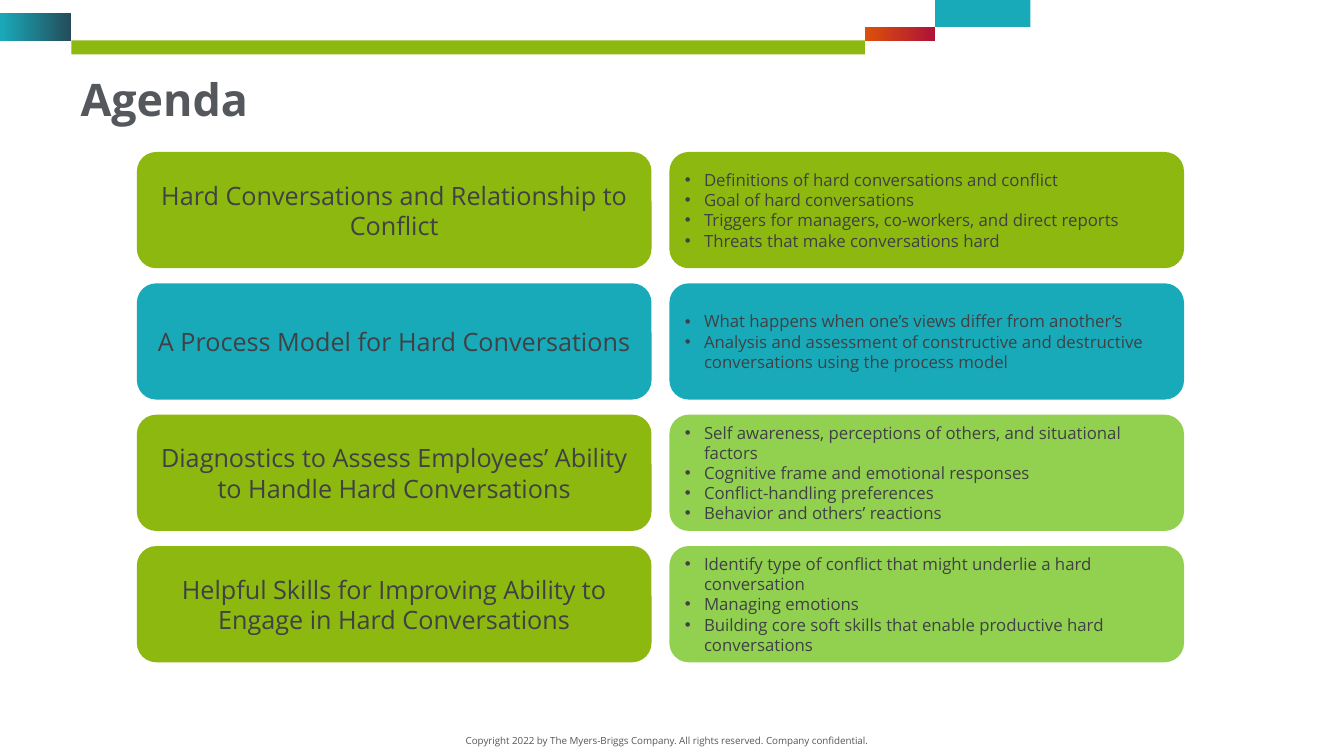
from lxml.etree import SubElement
from pptx import Presentation
from pptx.dml.color import RGBColor
from pptx.enum.shapes import MSO_SHAPE
from pptx.enum.text import MSO_ANCHOR, PP_ALIGN
from pptx.oxml.ns import qn
from pptx.util import Cm, Pt

TITLE = "Agenda"
FOOTER = "Copyright 2022 by The Myers-Briggs Company. All rights reserved. Company confidential."
TOPICS = [
    ("Hard Conversations and Relationship to Conflict", "green", "green", [
        "Definitions of hard conversations and conflict",
        "Goal of hard conversations",
        "Triggers for managers, co-workers, and direct reports",
        "Threats that make conversations hard",
    ]),
    ("A Process Model for Hard Conversations", "teal", "teal", [
        "What happens when one’s views differ from another’s",
        "Analysis and assessment of constructive and destructive conversations using the process model",
    ]),
    ("Diagnostics to Assess Employees’ Ability to Handle Hard Conversations", "green", "lime", [
        "Self awareness, perceptions of others, and situational factors",
        "Cognitive frame and emotional responses",
        "Conflict-handling preferences",
        "Behavior and others’ reactions",
    ]),
    ("Helpful Skills for Improving Ability to Engage in Hard Conversations", "green", "lime", [
        "Identify type of conflict that might underlie a hard conversation",
        "Managing emotions",
        "Building core soft skills that enable productive hard conversations",
    ]),
]
BANDS = [
    (1.8, 1.02, 20, 0.35, ["green"]),
    (0, 0.33, 1.8, 0.7, ["teal", "navy"]),
    (23.57, -0.02, 2.4, 0.7, ["teal"]),
    (21.8, 0.68, 1.77, 0.35, ["orange", "red"]),
]


class Theme:
    font = "Open Sans"
    size = {"title": 32, "topic": 18, "point": 12, "footer": 7}
    color = {
        "green": "8CB80F", "teal": "19AABA", "lime": "92D050", "navy": "244C5A",
        "orange": "DC500A", "red": "AE1237", "gray": "54575B", "ink": "3F4144",
    }


def shade(name):
    return RGBColor.from_string(Theme.color[name])


def block(slide, kind, place, hues):
    shape = slide.shapes.add_shape(kind, *map(Cm, place))
    shape.shadow.inherit = False
    shape.line.fill.background()
    if len(hues) == 1:
        shape.fill.solid()
        shape.fill.fore_color.rgb = shade(hues[0])
    else:
        shape.fill.gradient()
        shape.fill.gradient_angle = 0
        for stop, hue in zip(shape.fill.gradient_stops, hues):
            stop.color.rgb = shade(hue)
    return shape


def write(shape, lines, role, hue, align, anchor, bullet=False):
    frame = shape.text_frame
    frame.word_wrap = True
    frame.vertical_anchor = anchor
    for i, line in enumerate(lines):
        para = frame.add_paragraph() if i else frame.paragraphs[0]
        para.text = line
        para.alignment = align
        if bullet:
            props = para._p.get_or_add_pPr()
            props.set("marL", str(Cm(0.48)))
            props.set("indent", str(-Cm(0.48)))
            SubElement(props, qn("a:buFont")).set("typeface", "Arial")
            SubElement(props, qn("a:buChar")).set("char", "•")
        para.font.name = Theme.font
        para.font.size = Pt(Theme.size[role])
        para.font.color.rgb = shade(hue)
    return frame


def main():
    deck = Presentation()
    deck.slide_width, deck.slide_height = Cm(33.87), Cm(19.05)
    slide = deck.slides.add_slide(deck.slide_layouts[6])

    for *place, hues in BANDS:
        block(slide, MSO_SHAPE.RECTANGLE, place, hues)

    box = slide.shapes.add_textbox(*map(Cm, (11.33, 18.39, 10.95, 0.56)))
    write(box, [FOOTER], "footer", "gray", PP_ALIGN.CENTER, MSO_ANCHOR.TOP)

    box = slide.shapes.add_textbox(*map(Cm, (1.78, 1.83, 28.7, 2.51)))
    head = write(box, [TITLE], "title", "gray", PP_ALIGN.LEFT, MSO_ANCHOR.TOP).paragraphs[0]
    head.font.bold = True
    head.line_spacing = 0.9

    left, right, top, pitch = 3.45, 16.87, 3.83, 3.31
    wide, high = 12.97, 2.93
    for row, (topic, hue, tint, points) in enumerate(TOPICS):
        y = top + row * pitch
        card = block(slide, MSO_SHAPE.ROUNDED_RECTANGLE, (left, y, wide, high), [hue])
        write(card, [topic], "topic", "ink", PP_ALIGN.CENTER, MSO_ANCHOR.MIDDLE)
        card = block(slide, MSO_SHAPE.ROUNDED_RECTANGLE, (right, y, wide, high), [tint])
        write(card, points, "point", "ink", PP_ALIGN.LEFT, MSO_ANCHOR.MIDDLE, True)

    deck.save("out.pptx")


if __name__ == "__main__":
    main()
